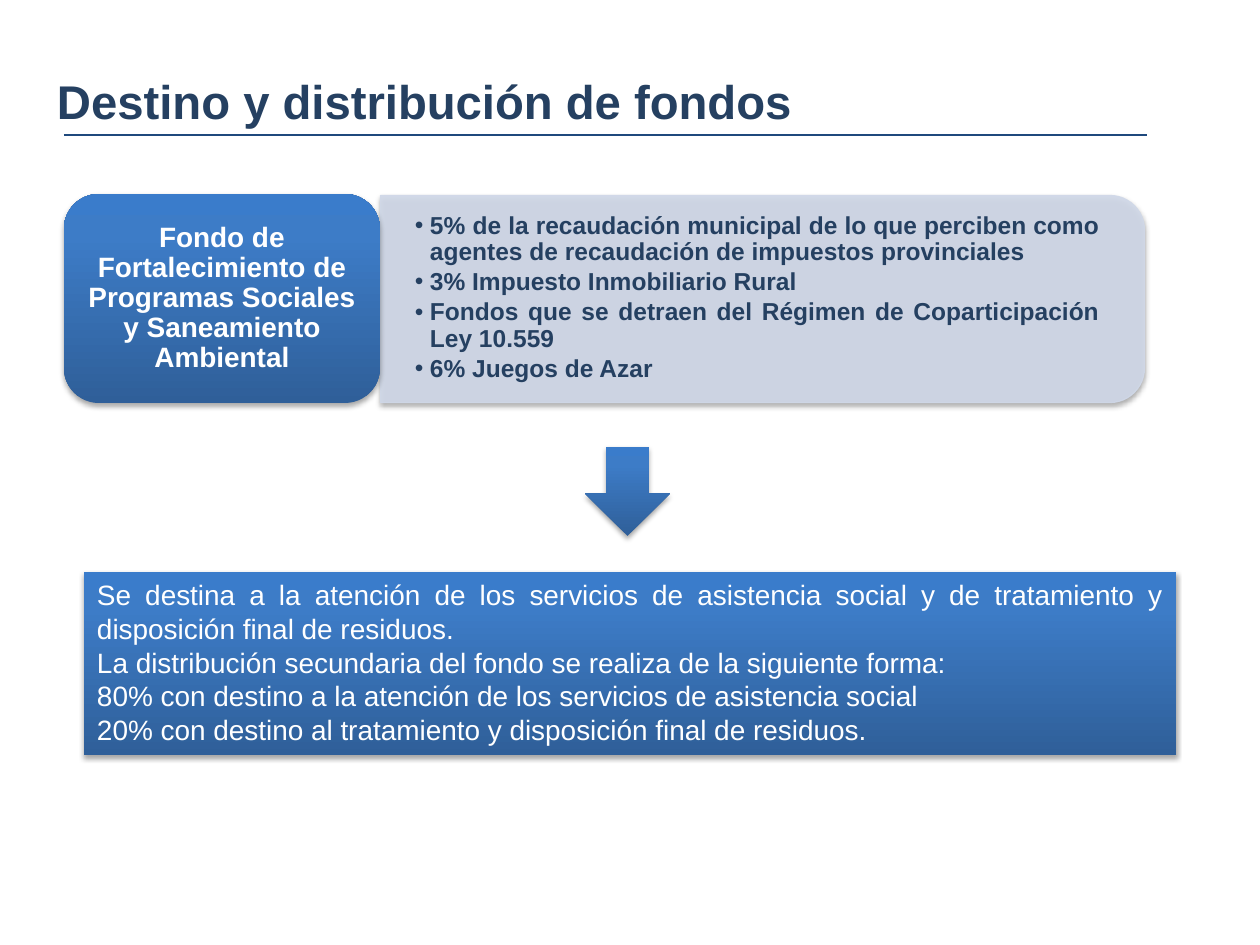
from copy import deepcopy

from lxml.etree import SubElement
from pptx import Presentation
from pptx.dml.color import RGBColor
from pptx.enum.shapes import MSO_CONNECTOR, MSO_SHAPE
from pptx.enum.text import MSO_ANCHOR, MSO_AUTO_SIZE, PP_ALIGN
from pptx.oxml.ns import qn
from pptx.util import Emu, Pt

PX = 914400 // 126
NAVY, WHITE, PALE = "254061", "FFFFFF", "D0D8E8"
GRADIENT = [(0, "2F5F99"), (0.8, "3D7CC7"), (1, "3A7CCB")]
SOURCES = [
    "5% de la recaudación municipal de lo que perciben como agentes de recaudación de impuestos provinciales",
    "3% Impuesto Inmobiliario Rural",
    "Fondos que se detraen del Régimen de Coparticipación Ley 10.559",
    "6% Juegos de Azar",
]
USES = [
    "Se destina a la atención de los servicios de asistencia social y de tratamiento y disposición final de residuos.",
    "La distribución secundaria del fondo se realiza de la siguiente forma:",
    "80% con destino a la atención de los servicios de asistencia social",
    "20% con destino al tratamiento y disposición final de residuos.",
]


def px(length):
    """Turn pixels into EMU."""
    return Emu(length * PX)


def color(value):
    """Turn a hex string into a colour."""
    return RGBColor.from_string(value)


def place(shape, left, top, width, height):
    """Move and size a shape in pixels."""
    shape.left, shape.top = px(left), px(top)
    shape.width, shape.height = px(width), px(height)


def add_alpha(color_element, percent):
    """Make a colour element partly transparent."""
    SubElement(color_element, qn("a:alpha"), val=str(percent * 1000))


def add_shadow(shape):
    """Give a shape a soft shadow below it."""
    shape.shadow.inherit = False
    effects = shape.element.spPr.find(qn("a:effectLst"))
    outer = SubElement(effects, qn("a:outerShdw"), blurRad=str(Pt(3.1)), dist=str(Pt(1.8)),
                       dir="5400000", rotWithShape="0")
    add_alpha(SubElement(outer, qn("a:srgbClr"), val="000000"), 35)


def add_gradient_shape(page, kind, *bounds):
    """Add a borderless shape with the blue gradient and a shadow."""
    shape = page.shapes.add_shape(kind, *map(px, bounds))
    shape.fill.gradient()
    shape.fill.gradient_angle = 90
    stops = shape.element.spPr.find(qn("a:gradFill")).find(qn("a:gsLst"))
    stops.insert(1, deepcopy(stops[0]))
    for stop, (position, value) in zip(shape.fill.gradient_stops, GRADIENT):
        stop.position = position
        stop.color.rgb = color(value)
    shape.line.fill.background()
    add_shadow(shape)
    return shape


def add_panel(page, *bounds):
    """Add the pale panel, turned so its round corners face right."""
    panel = page.shapes.add_shape(MSO_SHAPE.ROUND_2_SAME_RECTANGLE, *map(px, bounds))
    panel.rotation = 90
    panel.fill.solid()
    panel.fill.fore_color.rgb = color(PALE)
    panel.line.color.rgb = color(PALE)
    panel.line.width = Pt(0.75)
    for color_element in list(panel.element.spPr.iter(qn("a:srgbClr"))):
        add_alpha(color_element, 90)
    add_shadow(panel)
    return panel


def add_rule(page, left, right, y):
    """Add the line under the title."""
    rule = page.shapes.add_connector(MSO_CONNECTOR.STRAIGHT, px(left), px(y), px(right), px(y))
    rule.line.color.rgb = color("1F497D")
    rule.line.width = Pt(1.5)
    SubElement(rule.element.spPr, qn("a:effectLst"))


def add_bullet(para, indent):
    """Give a paragraph a hanging bullet."""
    properties = para._p.get_or_add_pPr()
    properties.set("marL", str(px(indent)))
    properties.set("indent", str(-px(indent)))
    SubElement(properties, qn("a:buFont"), typeface="Arial")
    SubElement(properties, qn("a:buChar"), char="•")


def write(shape, lines, size, value, align, anchor=MSO_ANCHOR.MIDDLE, bold=True,
          spacing=1.0, after=0, insets=(13, 6), bullet_indent=0):
    """Fill a shape with formatted paragraphs."""
    frame = shape.text_frame
    frame.word_wrap = True
    frame.auto_size = MSO_AUTO_SIZE.NONE
    frame.vertical_anchor = anchor
    frame.margin_left = frame.margin_right = px(insets[0])
    frame.margin_top = frame.margin_bottom = px(insets[1])
    frame.text = "\n".join(lines)
    for para in frame.paragraphs:
        if bullet_indent:
            add_bullet(para, bullet_indent)
        para.alignment = align
        para.line_spacing = spacing
        para.space_before = Pt(0)
        para.space_after = Pt(after)
        for span in para.runs:
            span.font.name = "Arial"
            span.font.size = Pt(size)
            span.font.bold = bold
            span.font.color.rgb = color(value)


def main():
    """Build the slide and save it."""
    deck = Presentation()
    deck.slide_width, deck.slide_height = px(1260), px(945)
    page = deck.slides.add_slide(deck.slide_layouts[1])
    title, sources = page.placeholders

    place(title, 44, 66, 1111, 71)
    write(title, ["Destino y distribución de fondos"], 27, NAVY, PP_ALIGN.LEFT, MSO_ANCHOR.TOP)
    add_rule(page, 64, 1147, 135)

    panel = add_panel(page, 659, -83, 207, 764)
    sources.element.addprevious(panel.element)
    place(sources, 381, 205, 753, 186)
    write(sources, SOURCES, 14, NAVY, PP_ALIGN.JUSTIFY, spacing=0.9, after=2,
          insets=(34, 18), bullet_indent=15)

    fund = add_gradient_shape(page, MSO_SHAPE.ROUNDED_RECTANGLE, 64, 194, 316, 209)
    write(fund, ["Fondo de Fortalecimiento de Programas Sociales y Saneamiento Ambiental"],
          16, WHITE, PP_ALIGN.CENTER, spacing=0.9, insets=(9, 4))

    add_gradient_shape(page, MSO_SHAPE.DOWN_ARROW, 585, 447, 85, 89)
    uses = add_gradient_shape(page, MSO_SHAPE.RECTANGLE, 84, 572, 1092, 183)
    write(uses, USES, 16, WHITE, PP_ALIGN.JUSTIFY, MSO_ANCHOR.TOP, bold=False)
    deck.save("out.pptx")


if __name__ == "__main__":
    main()
